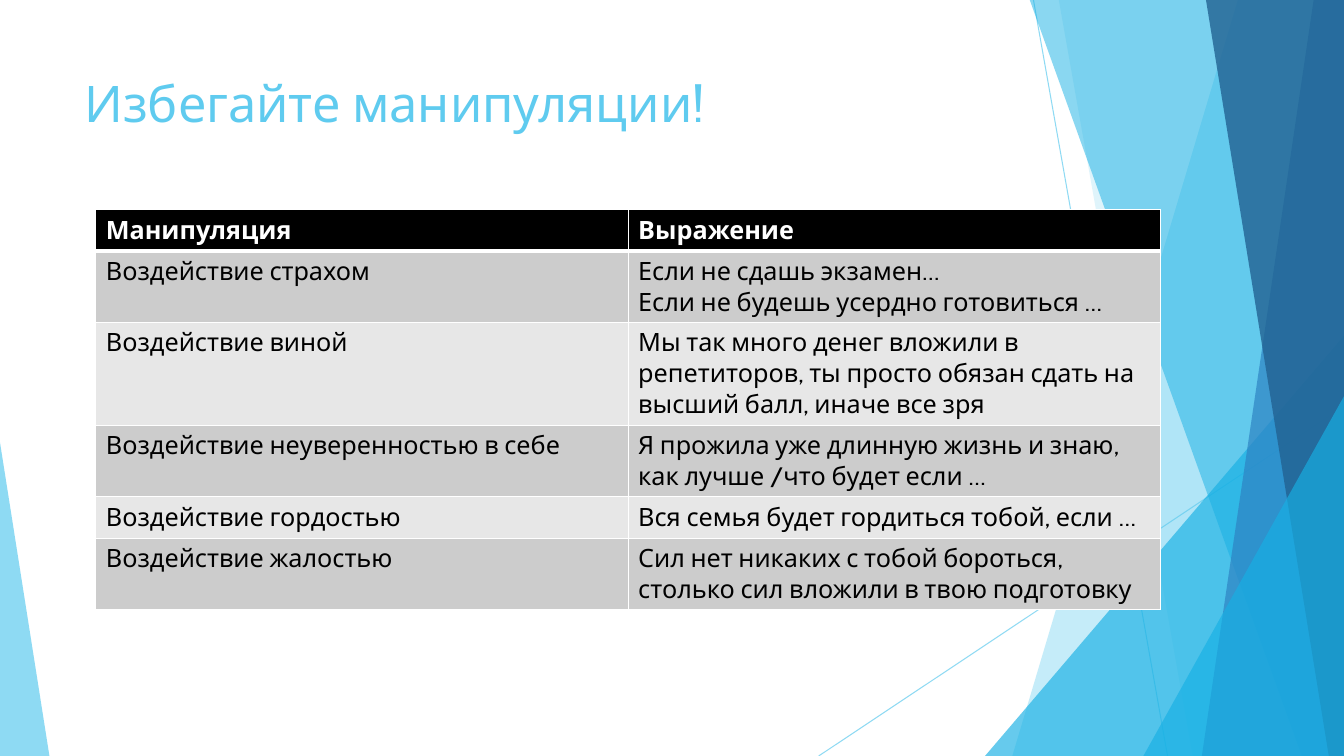
"""Build the slide about avoiding manipulation: faceted backdrop, title and table."""
from dataclasses import dataclass

from lxml.etree import SubElement
from pptx import Presentation
from pptx.dml.color import RGBColor
from pptx.enum.shapes import MSO_CONNECTOR, MSO_SHAPE
from pptx.enum.text import MSO_ANCHOR
from pptx.oxml.ns import qn
from pptx.util import Inches, Pt

SKY = RGBColor(0x5F, 0xCB, 0xEF)
AZURE = RGBColor(0x17, 0xB0, 0xE4)
BLUE = RGBColor(0x2E, 0x83, 0xC3)
NAVY = RGBColor(0x22, 0x62, 0x92)
BLACK = RGBColor(0, 0, 0)
WHITE = RGBColor(0xFF, 0xFF, 0xFF)
DARK_BAND = RGBColor(0xCC, 0xCC, 0xCC)
LIGHT_BAND = RGBColor(0xE7, 0xE7, 0xE7)
FONT = "Cabin"
WIDTH, HEIGHT, TOP = 13.33, 7.5, -0.01


@dataclass(frozen=True)
class Ray:
    start: tuple[float, float]
    end: tuple[float, float]


@dataclass(frozen=True)
class Facet:
    top_left: float
    bottom_left: float
    bottom_right: float
    color: RGBColor
    opacity: int


@dataclass(frozen=True)
class Wedge:
    left: float
    top: float
    width: float
    apex: float
    color: RGBColor
    opacity: int


@dataclass(frozen=True)
class Row:
    manipulation: str
    expression: str
    height: float


RAYS = [Ray((10.25, 0), (11.58, HEIGHT)), Ray((WIDTH, 4.03), (8.12, HEIGHT))]
BACKDROP = [
    Facet(12.28, 10.04, WIDTH, SKY, 36),
    Facet(10.5, 11.83, WIDTH, SKY, 20),
    Wedge(9.77, 3.33, 3.56, 1, AZURE, 66),
    Facet(10.21, 12.91, WIDTH, AZURE, 50),
    Facet(13.03, 11.92, WIDTH, BLUE, 70),
    Facet(11.96, 13.18, WIDTH, NAVY, 80),
    Wedge(11.34, 3.93, 1.99, 1, AZURE, 66),
    Wedge(0, 4.39, 0.49, 0, SKY, 70),
]
ROWS = [
    Row("Манипуляция", "Выражение", 0.41),
    Row("Воздействие страхом",
        "Если не сдашь экзамен…\nЕсли не будешь усердно готовиться …", 0.71),
    Row("Воздействие виной",
        "Мы так много денег вложили в репетиторов, ты просто обязан сдать "
        "на высший балл, иначе все зря", 1.02),
    Row("Воздействие неуверенностью в себе",
        "Я прожила уже длинную жизнь и знаю, как лучше /что будет если …", 0.71),
    Row("Воздействие гордостью", "Вся семья будет гордиться тобой, если …", 0.41),
    Row("Воздействие жалостью",
        "Сил нет никаких с тобой бороться, столько сил вложили в твою подготовку", 0.71),
]


def set_opacity(part, percent: int) -> None:
    for color in part.iter(qn("a:srgbClr")):
        SubElement(color, qn("a:alpha"), val=str(percent * 1000))


def draw_ray(slide, ray: Ray) -> None:
    line = slide.shapes.add_connector(
        MSO_CONNECTOR.STRAIGHT, *map(Inches, ray.start + ray.end))
    line.line.color.rgb = SKY
    line.line.width = Pt(0.75)
    properties = line._element.spPr
    set_opacity(properties, 70)
    SubElement(properties, qn("a:effectLst"))


def draw_backdrop_part(slide, part: Facet | Wedge) -> None:
    if isinstance(part, Facet):
        corners = [(WIDTH, TOP), (part.bottom_right, HEIGHT),
                   (part.bottom_left, HEIGHT)]
        outline = slide.shapes.build_freeform(Inches(part.top_left), Inches(TOP))
        outline.add_line_segments([(Inches(x), Inches(y)) for x, y in corners])
        piece = outline.convert_to_shape()
    else:
        piece = slide.shapes.add_shape(
            MSO_SHAPE.ISOSCELES_TRIANGLE, Inches(part.left), Inches(part.top),
            Inches(part.width), Inches(HEIGHT - part.top))
        piece.adjustments[0] = part.apex
    piece.shadow.inherit = False
    piece.fill.solid()
    piece.fill.fore_color.rgb = part.color
    piece.line.fill.background()
    set_opacity(piece._element.spPr, part.opacity)


def write(frame, text: str, *, size: float, color: RGBColor, bold: bool = False) -> None:
    frame.word_wrap = True
    frame.text = text
    for paragraph in frame.paragraphs:
        font = paragraph.runs[0].font
        font.name = FONT
        font.size = Pt(size)
        font.bold = bold
        font.color.rgb = color


def draw_title(slide) -> None:
    title = slide.shapes.add_textbox(Inches(0.74), Inches(0.67), Inches(9.4), Inches(1.44))
    title.text_frame.vertical_anchor = MSO_ANCHOR.TOP
    write(title.text_frame, "Избегайте манипуляции!", size=36, color=SKY)


def set_borders(cell, widths: dict[str, float]) -> None:
    properties = cell._tc.get_or_add_tcPr()
    for side, width in widths.items():
        border = SubElement(properties, qn(f"a:ln{side}"), w=str(Pt(width)))
        fill = SubElement(border, qn("a:solidFill"))
        SubElement(fill, qn("a:srgbClr"), val=str(WHITE))


def draw_table(slide) -> None:
    table = slide.shapes.add_table(
        len(ROWS), 2, Inches(0.95), Inches(2.08), Inches(10.56),
        Inches(sum(row.height for row in ROWS))).table
    for index, row in enumerate(ROWS):
        table.rows[index].height = Inches(row.height)
        header = index == 0
        band = BLACK if header else DARK_BAND if index % 2 else LIGHT_BAND
        for column, text in enumerate((row.manipulation, row.expression)):
            cell = table.cell(index, column)
            set_borders(cell, {"L": 1, "R": 1, "T": 3 if index == 1 else 1,
                               "B": 3 if header else 1})
            cell.fill.solid()
            cell.fill.fore_color.rgb = band
            write(cell.text_frame, text, size=18,
                  color=WHITE if header else BLACK, bold=header)


def main() -> None:
    deck = Presentation()
    deck.slide_width, deck.slide_height = Inches(WIDTH), Inches(HEIGHT)
    slide = deck.slides.add_slide(deck.slide_layouts[6])
    for ray in RAYS:
        draw_ray(slide, ray)
    for part in BACKDROP:
        draw_backdrop_part(slide, part)
    draw_title(slide)
    draw_table(slide)
    deck.save("out.pptx")


if __name__ == "__main__":
    main()
